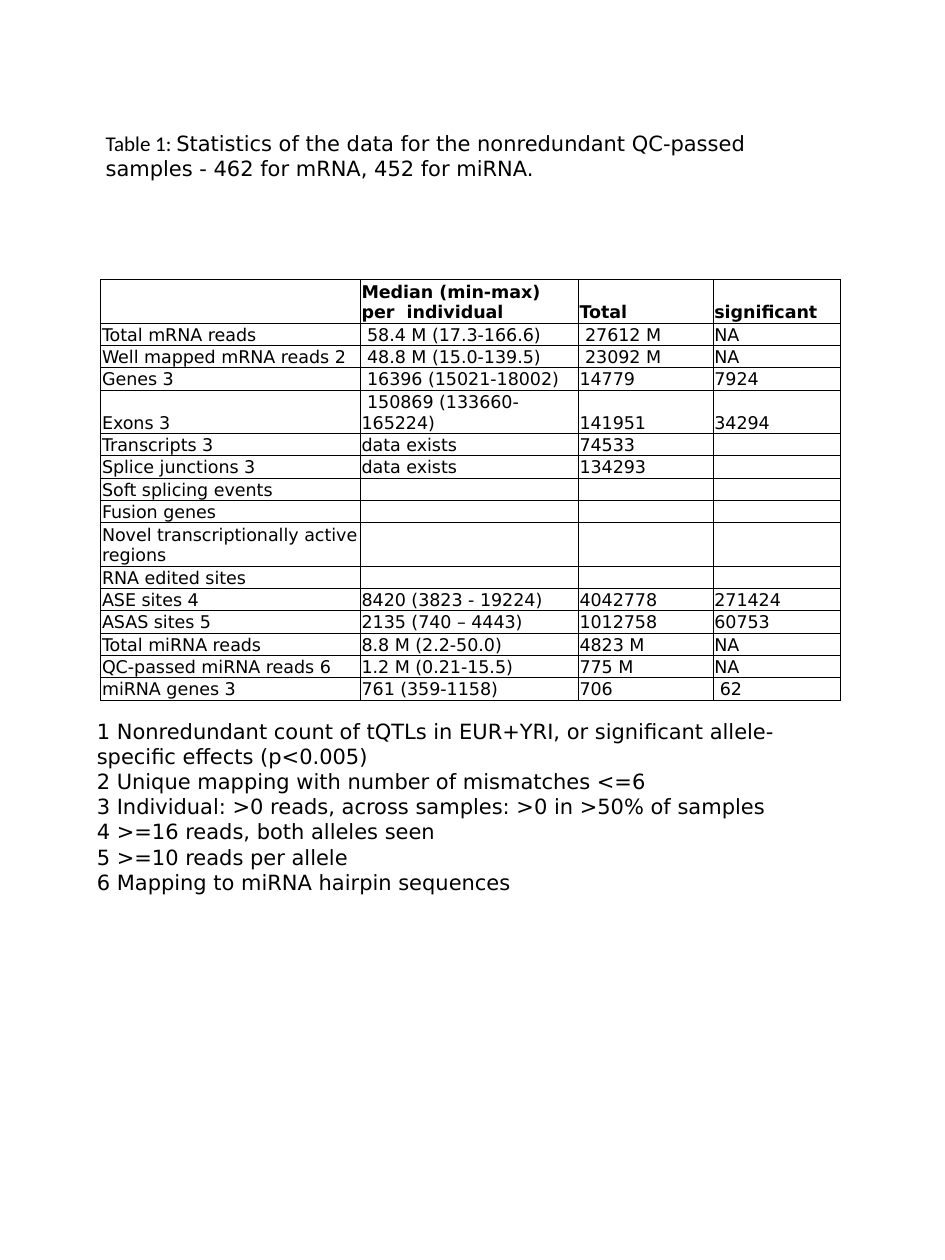
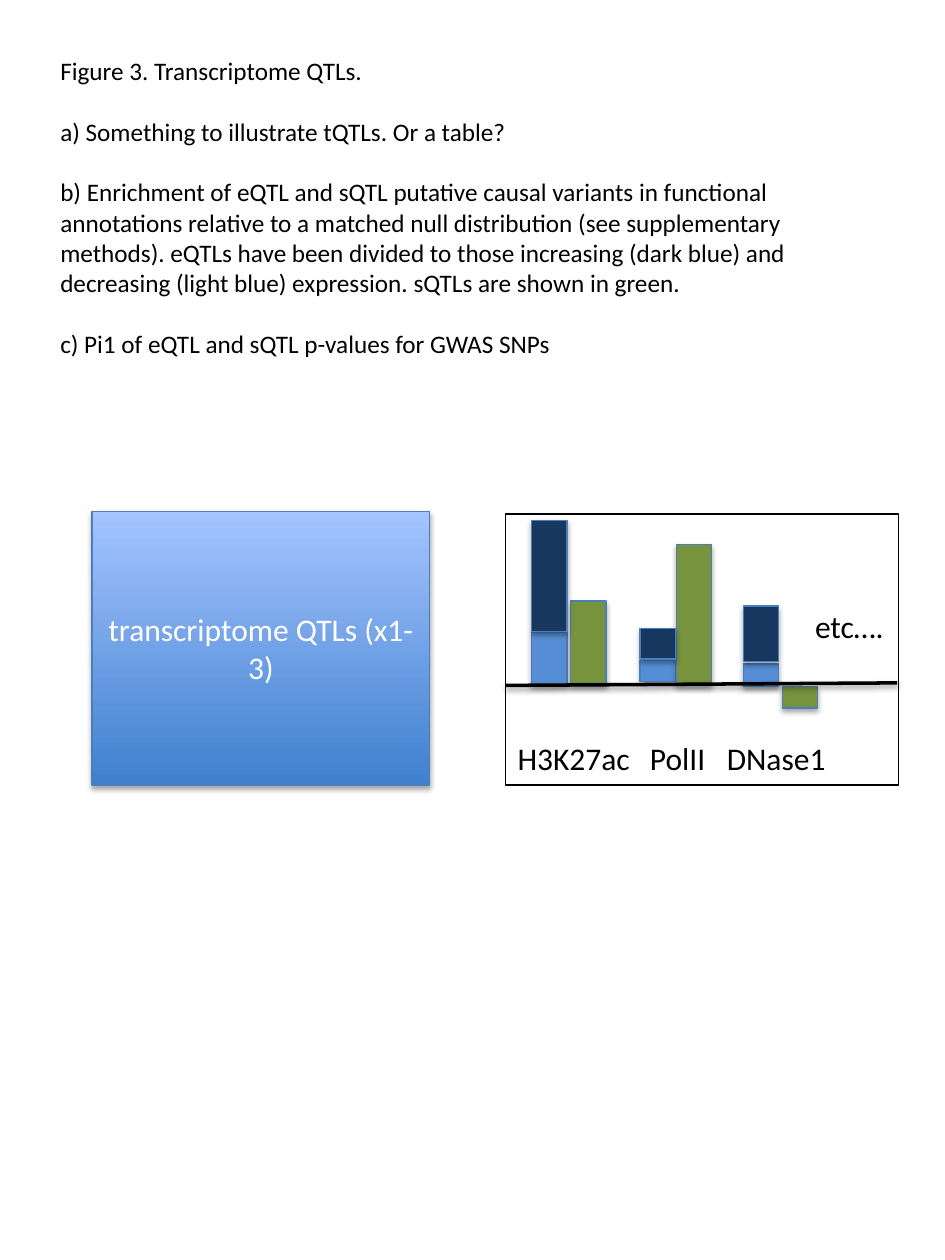
from lxml.etree import SubElement
from pptx import Presentation
from pptx.dml.color import RGBColor
from pptx.enum.shapes import MSO_CONNECTOR as CONNECTOR, MSO_SHAPE as SHAPE
from pptx.enum.text import MSO_ANCHOR as ANCHOR, PP_ALIGN as ALIGN
from pptx.oxml import parse_xml
from pptx.oxml.ns import nsdecls, qn
from pptx.util import Inches, Pt

BLACK, WHITE = "000000", "FFFFFF"
OUTLINE, DARK_BLUE, LIGHT_BLUE, GREEN = "4B7EBC", "17375E", "558ED5", "77933C"
TABLE_FONT, FIGURE_FONT = "DejaVu Sans", "Calibri"

rgb = RGBColor.from_string


def add_text(slide, box, lines, font, size, anchor=ANCHOR.TOP, wrap=True, gap=0):
    shape = slide.shapes.add_textbox(*map(Inches, box))
    frame = shape.text_frame
    frame.word_wrap = wrap
    frame.vertical_anchor = anchor
    frame.text = "\n".join(lines)
    for index, paragraph in enumerate(frame.paragraphs):
        paragraph.font.name = font
        paragraph.font.size = Pt(size)
        paragraph.font.color.rgb = rgb(BLACK)
        paragraph.space_before = Pt(gap if index else 0)
    return frame


def add_shadow(shape, distance, opacity):
    properties = shape._element.spPr
    for old in properties.findall(qn("a:effectLst")):
        properties.remove(old)
    properties.append(parse_xml(
        f'<a:effectLst {nsdecls("a")}><a:outerShdw blurRad="{Pt(3.1)}" dist="{Pt(distance)}" '
        f'dir="5400000" rotWithShape="0"><a:srgbClr val="{BLACK}">'
        f'<a:alpha val="{opacity * 1000}"/></a:srgbClr></a:outerShdw></a:effectLst>'))


presentation = Presentation()
presentation.slide_width = Inches(7.5)
presentation.slide_height = Inches(10)
blank = presentation.slide_layouts[6]

# Slide 1: table of sample statistics
slide = presentation.slides.add_slide(blank)
title = add_text(slide, (0.74, 0.4, 6, 1.67), ["Table 1: "], TABLE_FONT, 12, ANCHOR.MIDDLE)
title.paragraphs[0].runs[0].font.name = FIGURE_FONT
caption = title.paragraphs[0].add_run()
caption.text = ("Statistics of the data for the nonredundant QC-passed samples"
                " - 462 for mRNA, 452 for miRNA.")

rows = [
    ("", "Median (min-max) per  individual", "Total", "significant"),
    ("Total mRNA reads", " 58.4 M (17.3-166.6)", " 27612 M", "NA"),
    ("Well mapped mRNA reads 2", " 48.8 M (15.0-139.5)", " 23092 M", "NA"),
    ("Genes 3", " 16396 (15021-18002)", "14779", "7924"),
    ("Exons 3", " 150869 (133660-165224)", "141951", "34294"),
    ("Transcripts 3", "data exists", "74533", ""),
    ("Splice junctions 3", "data exists", "134293", ""),
    ("Soft splicing events", "", "", ""),
    ("Fusion genes", "", "", ""),
    ("Novel transcriptionally active regions", "", "", ""),
    ("RNA edited sites", "", "", ""),
    ("ASE sites 4", "8420 (3823 - 19224)", "4042778", "271424"),
    ("ASAS sites 5", "2135 (740 – 4443)", "1012758", "60753"),
    ("Total miRNA reads", "8.8 M (2.2-50.0)", "4823 M", "NA"),
    ("QC-passed miRNA reads 6", "1.2 M (0.21-15.5)", "775 M", "NA"),
    ("miRNA genes 3", "761 (359-1158)", "706", " 62"),
]
column_widths = [2.06, 1.73, 1.07, 1.01]
two_line_rows = (0, 9)

table = slide.shapes.add_table(len(rows), len(column_widths), Inches(0.8), Inches(2.22),
                               Inches(5.88), Inches(2.54)).table
table.first_row = table.horz_banding = False
for column, width in zip(table.columns, column_widths):
    column.width = Inches(width)
for row_index, texts in enumerate(rows):
    table.rows[row_index].height = Inches(0.29 if row_index in two_line_rows else 0.14)
    for column_index, text in enumerate(texts):
        cell = table.cell(row_index, column_index)
        cell.margin_left = cell.margin_right = cell.margin_top = Inches(0.01)
        cell.margin_bottom = 0
        cell.vertical_anchor = ANCHOR.BOTTOM
        cell.text = text
        paragraph = cell.text_frame.paragraphs[0]
        paragraph.font.name = TABLE_FONT
        paragraph.font.size = Pt(10)
        paragraph.font.bold = row_index == 0
        paragraph.font.color.rgb = rgb(BLACK)
        if not text:  # keeps empty cells from stretching their row
            SubElement(paragraph._p, qn("a:endParaRPr"), sz="1000")
        # Borders come before the fill in the cell properties
        for side in ("lnL", "lnR", "lnT", "lnB"):
            cell._tc.get_or_add_tcPr().append(parse_xml(
                f'<a:{side} {nsdecls("a")} w="{Pt(0.5)}"><a:solidFill>'
                f'<a:srgbClr val="{BLACK}"/></a:solidFill></a:{side}>'))
        cell.fill.background()

footnotes = [
    "1 Nonredundant count of tQTLs in EUR+YRI, or significant allele-specific effects (p<0.005)",
    "2 Unique mapping with number of mismatches <=6",
    "3 Individual: >0 reads, across samples: >0 in >50% of samples",
    "4 >=16 reads, both alleles seen",
    "5 >=10 reads per allele",
    "6 Mapping to miRNA hairpin sequences",
]
add_text(slide, (0.67, 5.65, 5.88, 1.72), footnotes, TABLE_FONT, 12)

# Slide 2: figure legend
slide = presentation.slides.add_slide(blank)
legend = [
    "Figure 3. Transcriptome QTLs.",
    "a) Something to illustrate tQTLs. Or a table?",
    "b) Enrichment of eQTL and sQTL putative causal variants in functional annotations "
    "relative to a matched null distribution (see supplementary methods). eQTLs have been "
    "divided to those increasing (dark blue) and decreasing (light blue) expression. "
    "sQTLs are shown in green.",
    "c) Pi1 of eQTL and sQTL p-values for GWAS SNPs",
]
add_text(slide, (0.38, 0.39, 6.75, 2.6), legend, FIGURE_FONT, 14.4, gap=17.4)

# Sketched bars: left, top, height, colour
bars = [
    (4.22, 5.02, 0.42, LIGHT_BLUE), (4.53, 4.77, 0.67, GREEN), (4.22, 4.13, 0.88, DARK_BLUE),
    (5.08, 5.24, 0.17, LIGHT_BLUE), (5.37, 4.32, 1.12, GREEN), (5.08, 4.99, 0.24, DARK_BLUE),
    (5.9, 5.27, 0.18, LIGHT_BLUE), (6.21, 5.45, 0.17, GREEN), (5.9, 4.81, 0.44, DARK_BLUE),
]
for left, top, height, colour in bars:
    bar = slide.shapes.add_shape(SHAPE.RECTANGLE, Inches(left), Inches(top),
                                 Inches(0.28), Inches(height))
    bar.fill.solid()
    bar.fill.fore_color.rgb = rgb(colour)
    bar.line.color.rgb = rgb(OUTLINE)
    bar.line.width = Pt(0.75)
    add_shadow(bar, 1.8, 35)

# Bar labels
labels = [("H3K27ac", 4.01, 5.82, 1.1), ("PolII", 5.06, 5.82, 0.65),
          ("DNase1", 5.67, 5.82, 1), ("etc….", 6.37, 4.77, 0.75)]
for label, left, top, width in labels:
    add_text(slide, (left, top, width, 0.4), [label], FIGURE_FONT, 18, wrap=False)

# Zero line
zero_line = slide.shapes.add_connector(CONNECTOR.STRAIGHT, Inches(4.01), Inches(5.44),
                                       Inches(7.12), Inches(5.42))
zero_line.line.color.rgb = rgb(BLACK)
zero_line.line.width = Pt(2)
add_shadow(zero_line, 1.6, 38)

# Panel for the transcriptome QTLs
panel = slide.shapes.add_shape(SHAPE.RECTANGLE, Inches(0.73), Inches(4.06),
                               Inches(2.68), Inches(2.17))
panel.fill.gradient()
panel.fill.gradient_angle = 90
for stop, position, colour in zip(panel.fill.gradient_stops, (0, 1), ("3F80CE", "A4C4FF")):
    stop.position = position
    stop.color.rgb = rgb(colour)
panel.line.color.rgb = rgb(OUTLINE)
panel.line.width = Pt(0.75)
add_shadow(panel, 1.8, 35)
panel.text_frame.word_wrap = True
panel.text_frame.vertical_anchor = ANCHOR.MIDDLE
panel.text_frame.text = "transcriptome QTLs (x1-3)"
paragraph = panel.text_frame.paragraphs[0]
paragraph.alignment = ALIGN.CENTER
paragraph.font.name = FIGURE_FONT
paragraph.font.size = Pt(18)
paragraph.font.color.rgb = rgb(WHITE)

# Frame around the bars
bar_frame = slide.shapes.add_shape(SHAPE.RECTANGLE, Inches(4.01), Inches(4.08),
                                   Inches(3.12), Inches(2.15))
bar_frame.fill.background()
bar_frame.line.color.rgb = rgb(BLACK)
bar_frame.line.width = Pt(0.75)
bar_frame.shadow.inherit = False

presentation.save("out.pptx")
